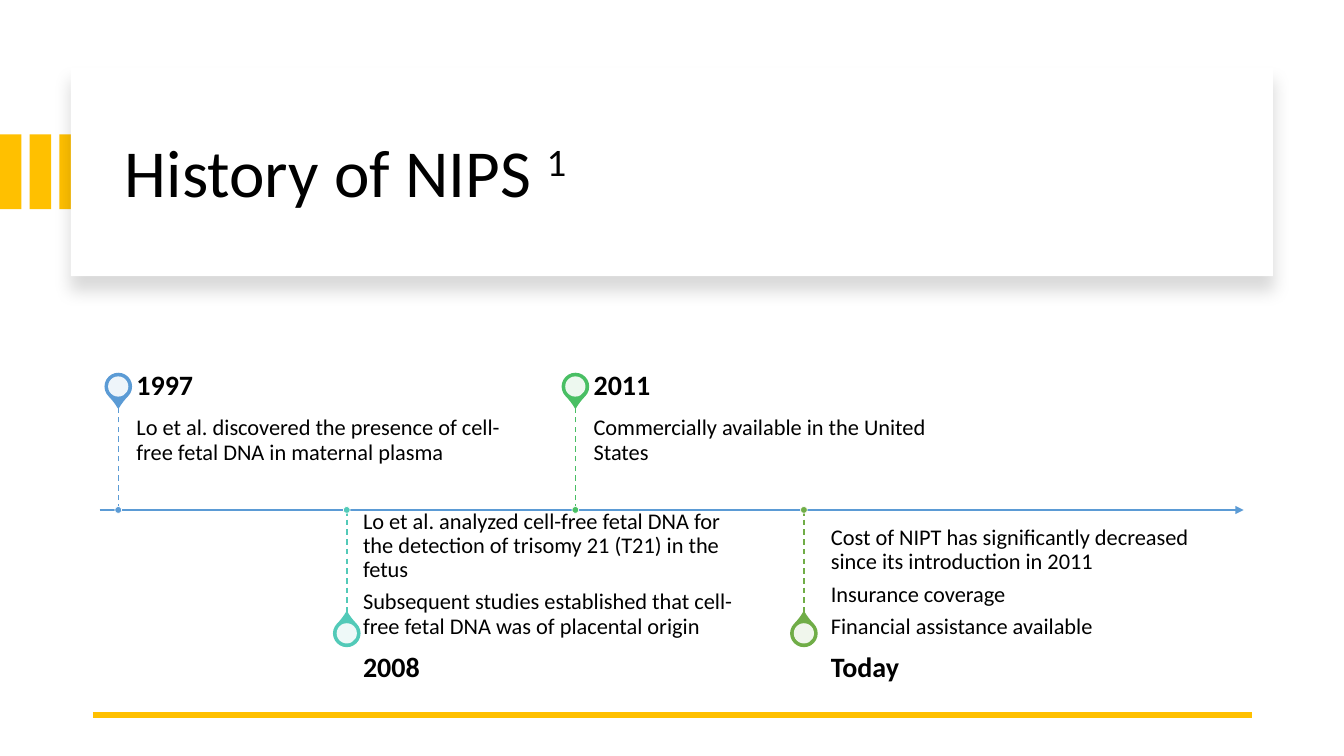
from dataclasses import dataclass

from lxml import etree
from pptx import Presentation
from pptx.dml.color import RGBColor
from pptx.enum.dml import MSO_LINE
from pptx.enum.shapes import MSO_CONNECTOR, MSO_SHAPE
from pptx.enum.text import MSO_ANCHOR
from pptx.oxml.ns import qn
from pptx.util import Cm, Pt

RECT, OVAL, TEAR = MSO_SHAPE.RECTANGLE, MSO_SHAPE.OVAL, MSO_SHAPE.TEAR
STRAIGHT = MSO_CONNECTOR.STRAIGHT
TOP, MIDDLE, BOTTOM = MSO_ANCHOR.TOP, MSO_ANCHOR.MIDDLE, MSO_ANCHOR.BOTTOM
DASH = MSO_LINE.DASH


@dataclass(frozen=True)
class Theme:
    """Colours, font and type sizes of the slide."""
    font: str = "Calibri"
    text: str = "000000"
    white: str = "FFFFFF"
    accent: str = "FFC000"
    axis: str = "5B9BD5"
    title_size: int = 48
    year_size: int = 20
    body_size: int = 16


THEME = Theme()
AXIS_Y = 12.85
FIRST_X, STEP_X = 2.98, 5.76
STEM, PIN_OFFSET = 2.63, 3.11
TEXT_W, BODY_H, YEAR_H = 9.58, 2.64, 0.94

EVENTS = [
    ("1997", "5B9BD5", 0.46,
     ["Lo et al. discovered the presence of cell-free fetal DNA in maternal plasma"]),
    ("2008", "52CAB8", 0.41,
     ["Lo et al. analyzed cell-free fetal DNA for the detection of trisomy 21 (T21) in the fetus",
      "Subsequent studies established that cell-free fetal DNA was of placental origin"]),
    ("2011", "49BF64", 0.46,
     ["Commercially available in the United States"]),
    ("Today", "70AD47", 0.68,
     ["Cost of NIPT has significantly decreased since its introduction in 2011",
      "Insurance coverage",
      "Financial assistance available"]),
]


def add_box(s, kind, x, y, w, h, fill, line=None, width=1):
    """Add a filled preset shape, placed in centimetres."""
    sp = s.shapes.add_shape(kind, Cm(x), Cm(y), Cm(w), Cm(h))
    sp.shadow.inherit = False
    sp.fill.solid()
    sp.fill.fore_color.rgb = RGBColor.from_string(fill)
    if line:
        sp.line.color.rgb = RGBColor.from_string(line)
        sp.line.width = Pt(width)
    else:
        sp.line.fill.background()
    return sp


def add_centred(s, kind, cx, cy, size, fill, **kw):
    """Add a square-framed shape around a centre point."""
    return add_box(s, kind, cx - size / 2, cy - size / 2, size, size, fill, **kw)


def add_line(s, x1, y1, x2, y2, color, width, dash=None, arrow=False):
    """Add a straight line, dashed or with an arrowhead if asked."""
    c = s.shapes.add_connector(STRAIGHT, Cm(x1), Cm(y1), Cm(x2), Cm(y2))
    c.line.color.rgb = RGBColor.from_string(color)
    c.line.width = Pt(width)
    if dash:
        c.line.dash_style = dash
    if arrow:
        etree.SubElement(c.line._get_or_add_ln(), qn("a:tailEnd"), type="triangle")
    etree.SubElement(c._element.spPr, qn("a:effectLst"))
    return c


def add_text(s, paragraphs, x, y, w, h, size, bold=False, anchor=MIDDLE,
             insets=(0, 0, 0.36, 0), after=0, superscript=None):
    """Add a text box holding the given paragraphs."""
    sp = s.shapes.add_textbox(Cm(x), Cm(y), Cm(w), Cm(h))
    tf = sp.text_frame
    tf.word_wrap = True
    tf.vertical_anchor = anchor
    tf.margin_left, tf.margin_top, tf.margin_right, tf.margin_bottom = map(Cm, insets)
    for i, text in enumerate(paragraphs):
        p = tf.paragraphs[0] if i == 0 else tf.add_paragraph()
        p.line_spacing = 0.9
        p.space_after = Pt(after)
        for part in filter(None, (text, superscript)):
            r = p.add_run()
            r.text = part
            r.font.name = THEME.font
            r.font.size = Pt(size)
            r.font.bold = bold
            r.font.color.rgb = RGBColor.from_string(THEME.text)
        if superscript:
            r._r.get_or_add_rPr().set("baseline", "30000")
    return sp


def add_soft_shadow(sp):
    """Give a shape a soft shadow that falls downwards."""
    effects = sp._element.spPr.find(qn("a:effectLst"))
    shadow = etree.SubElement(effects, qn("a:outerShdw"), blurRad=str(Pt(11)),
                              dist=str(Pt(10)), dir="5400000", algn="t", rotWithShape="0")
    color = etree.SubElement(shadow, qn("a:srgbClr"), val=THEME.text)
    etree.SubElement(color, qn("a:alpha"), val="15000")


def add_header(s):
    """Add the accent bars, the title panel and the title."""
    for i in range(3):
        add_box(s, RECT, i * 0.75, 3.39, 0.54, 1.88, THEME.accent)
    add_soft_shadow(add_box(s, RECT, 1.79, 1.7, 30.29, 5.26, THEME.white))
    add_text(s, ["History of NIPS "], 2.9, 2.26, 28.27, 4.32, THEME.title_size,
             insets=(0.25, 0.13, 0.25, 0.13), superscript="1")


def add_pin(s, cx, cy, color, rotation):
    """Add a map pin with a pale centre."""
    pin = add_centred(s, TEAR, cx, cy, 0.66, color, line=color)
    pin.adjustments[0] = 1.15
    pin.rotation = rotation
    hole = add_centred(s, OVAL, cx, cy, 0.51, THEME.white)
    color_el = hole._element.spPr.find(qn("a:solidFill"))[0]
    etree.SubElement(color_el, qn("a:alpha"), val="90000")


def add_event(s, cx, above, year, color, gap, notes):
    """Add one event, above or below the time axis."""
    side = -1 if above else 1
    body_y = AXIS_Y - STEM if above else AXIS_Y + 0.89
    year_y = body_y - YEAR_H if above else body_y + BODY_H
    add_pin(s, cx, AXIS_Y + side * PIN_OFFSET, color, 135 if above else 315)
    add_text(s, notes, cx + gap, body_y, TEXT_W, BODY_H, THEME.body_size,
             anchor=TOP if above else BOTTOM, after=5.6,
             insets=(0, 0.28, 0.28, 0.43) if above else (0, 0.43, 0, 0.28))
    add_text(s, [year], cx + gap, year_y, TEXT_W, YEAR_H, THEME.year_size, bold=True)
    add_line(s, cx, AXIS_Y, cx, AXIS_Y + side * STEM, color, 1, dash=DASH)
    add_centred(s, OVAL, cx, AXIS_Y, 0.17, color, line=THEME.white, width=0.5)


def main():
    """Build the slide and save it."""
    prs = Presentation()
    prs.slide_width, prs.slide_height = Cm(33.87), Cm(19.05)
    s = prs.slides.add_slide(prs.slide_layouts[6])
    add_header(s)
    add_line(s, 2.34, 18.01, 31.55, 18.01, THEME.accent, 4.5)
    add_line(s, 2.51, AXIS_Y, 31.34, AXIS_Y, THEME.axis, 1.5, arrow=True)
    for i, event in enumerate(EVENTS):
        add_event(s, FIRST_X + i * STEP_X, i % 2 == 0, *event)
    prs.save("out.pptx")


if __name__ == "__main__":
    main()
